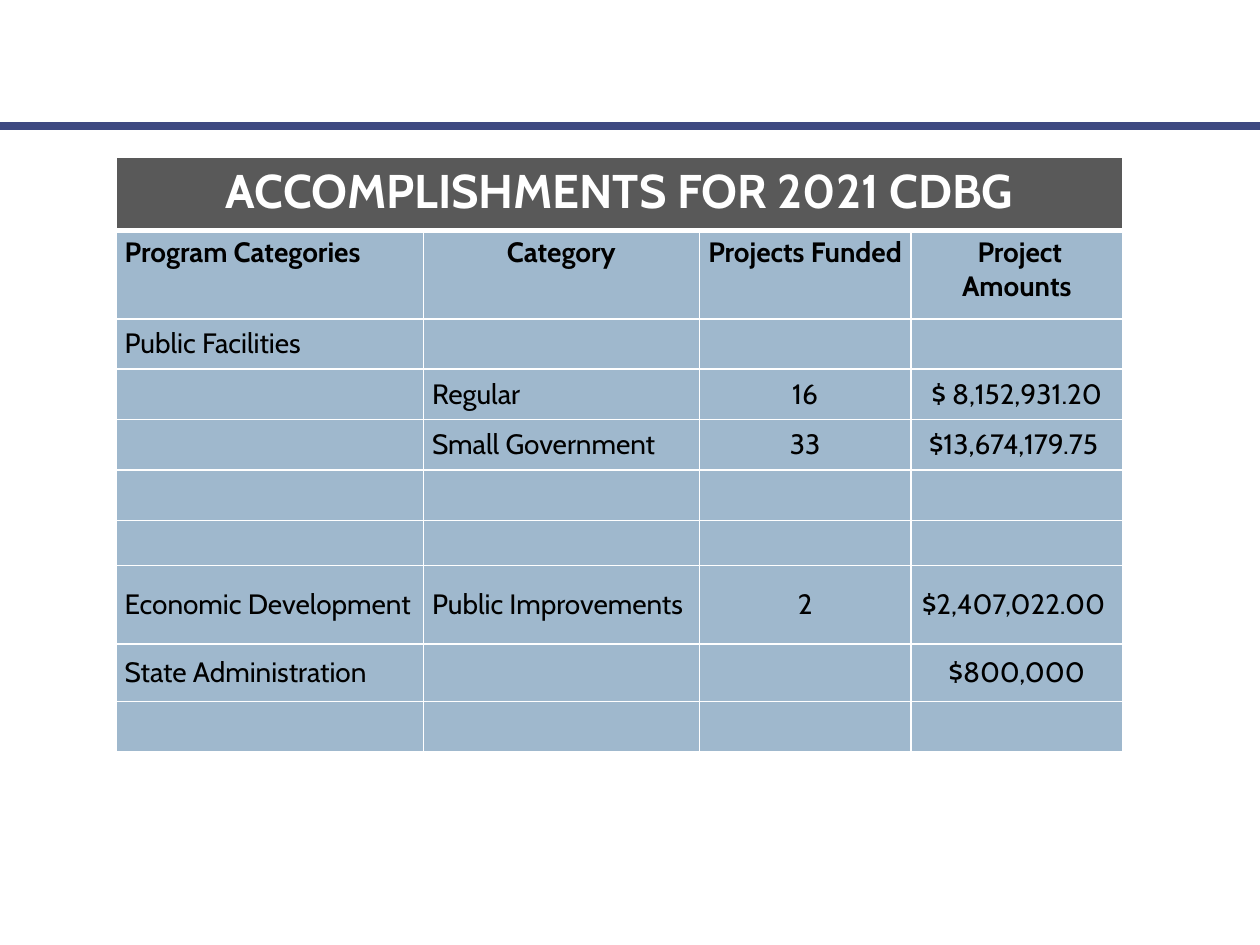
from lxml.etree import SubElement as Sub
from pptx import Presentation
from pptx.dml.color import RGBColor as RGB
from pptx.enum.shapes import MSO_CONNECTOR as Conn
from pptx.enum.text import MSO_ANCHOR as Anchor, PP_ALIGN as Align
from pptx.oxml.ns import qn
from pptx.util import Inches, Pt

# Content
TITLE = "ACCOMPLISHMENTS FOR 2021 CDBG"
HEAD = ("Program Categories", "Category", "Projects Funded", " Project\nAmounts")
BLANK = ("",) * 4
BODY = [
    ("Public Facilities", "", "", ""),
    ("", "Regular", "16", "$ 8,152,931.20"),
    ("", "Small Government", "33", "$13,674,179.75 "),
    BLANK,
    BLANK,
    ("Economic Development", "Public Improvements", "2", "$2,407,022.00 "),
    ("State Administration", "", "", "$800,000"),
    BLANK,
]
ROWS = [(TITLE, "", "", ""), HEAD] + BODY

# Format
COLS = (2.44, 2.19, 1.68, 1.68)
HIGH = (0.58, 0.7, 0.4, 0.4, 0.4, 0.4, 0.36, 0.62, 0.46, 0.4)
HEX = {"rule": "3E4981", "title": "595959", "cell": "9FB8CD",
       "white": "FFFFFF", "black": "000000"}
PAD = {"margin_left": 0.07, "margin_right": 0.07,
       "margin_top": 0.04, "margin_bottom": 0.04}


def color(name):
    return RGB.from_string(HEX[name])


def edge(cell, top, base):
    props = cell._tc.get_or_add_tcPr()
    for side, wide in (("L", 1), ("R", 1), ("T", top), ("B", base)):
        line = Sub(props, qn("a:ln" + side), w=str(Pt(wide)))
        Sub(Sub(line, qn("a:solidFill")), qn("a:srgbClr"), val=HEX["white"])


def write(cell, text, align, size, bold, ink):
    cell.text_frame.text = text
    look = {"name": "Cabin", "size": Pt(size), "bold": bold}
    for para in cell.text_frame.paragraphs:
        para.alignment = align
        for run in para.runs:
            for key, val in look.items():
                setattr(run.font, key, val)
            run.font.color.rgb = color(ink)
        if not text:  # keeps empty rows from growing
            Sub(para._p, qn("a:endParaRPr"), sz=str(size * 100))


deck = Presentation()
deck.slide_width, deck.slide_height = Inches(10), Inches(7.5)
slide = deck.slides.add_slide(deck.slide_layouts[6])

# Rule across the slide
rule = slide.shapes.add_connector(
    Conn.STRAIGHT, 0, Inches(1), Inches(10), Inches(1))
rule.line.color.rgb = color("rule")
rule.line.width = Pt(4.5)
Sub(rule._element.spPr, qn("a:effectLst"))

# Table
grid = slide.shapes.add_table(
    len(ROWS), len(COLS), Inches(0.92), Inches(1.25),
    Inches(sum(COLS)), Inches(sum(HIGH))).table
for col, wide in zip(grid.columns, COLS):
    col.width = Inches(wide)
for row, tall in zip(grid.rows, HIGH):
    row.height = Inches(tall)
grid.cell(0, 0).merge(grid.cell(0, 3))

for r, row in enumerate(ROWS):
    for c, text in enumerate(row):
        cell = grid.cell(r, c)
        for key, val in PAD.items():
            setattr(cell, key, Inches(val))
        cell.vertical_anchor = Anchor.MIDDLE if r > 1 else Anchor.TOP
        edge(cell, 3 if r == 1 else 1, 3 if r == 0 else 1)
        cell.fill.solid()
        cell.fill.fore_color.rgb = color("cell" if r else "title")
        mid = r == 0 or c > 1 or (r == 1 and c == 1)
        write(cell, text, Align.CENTER if mid else Align.LEFT,
              16 if r else 27, r < 2, "black" if r else "white")

deck.save("out.pptx")
